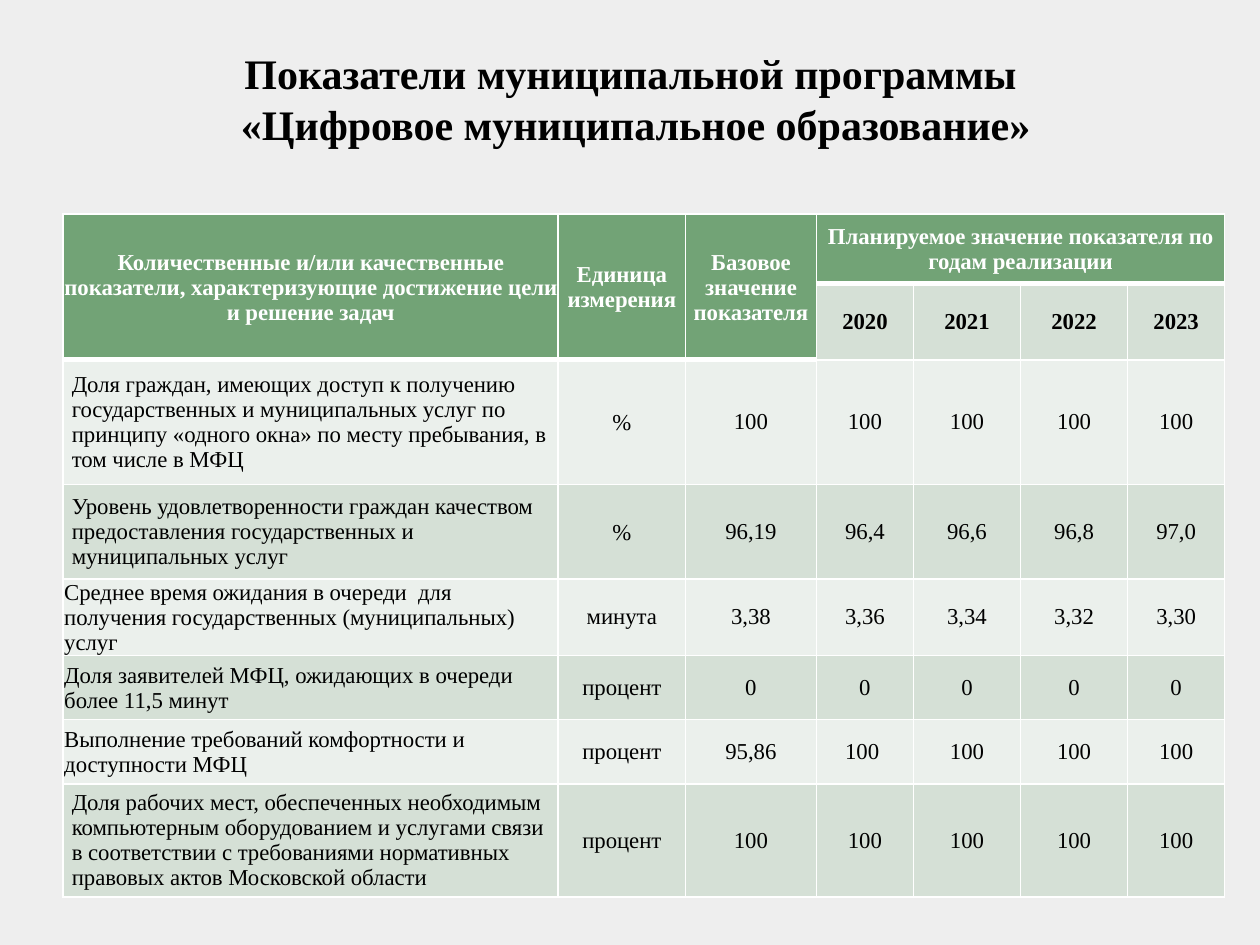
from dataclasses import dataclass

from lxml import etree
from pptx import Presentation
from pptx.dml.color import RGBColor
from pptx.enum.text import MSO_ANCHOR, PP_ALIGN
from pptx.oxml.ns import qn
from pptx.util import Inches, Pt

LEFT, CENTER = PP_ALIGN.LEFT, PP_ALIGN.CENTER
MIDDLE, BOTTOM = MSO_ANCHOR.MIDDLE, MSO_ANCHOR.BOTTOM


@dataclass(frozen=True)
class Theme:
    font: str = "Times New Roman"
    title_size: int = 24
    table_size: int = 13
    background: str = "EEEEEE"
    text: str = "000000"
    white: str = "FFFFFF"
    header: str = "72A376"
    band_dark: str = "D5E0D6"
    band_light: str = "EBF0EC"
    border: float = 1
    header_border: float = 3
    tight: tuple = (0.01, 0.01, 0.01, 0)
    wide: tuple = (0.07, 0, 0.07, 0)


class SlideBuilder:
    def __init__(self, prs, theme):
        self.theme = theme
        self.slide = prs.slides.add_slide(prs.slide_layouts[6])
        fill = self.slide.background.fill
        fill.solid()
        fill.fore_color.rgb = RGBColor.from_string(theme.background)

    def run(self, p, text, size, color, bold):
        r = p.add_run()
        r.text = text
        r.font.name = self.theme.font
        r.font.size = Pt(size)
        r.font.bold = bold
        r.font.color.rgb = RGBColor.from_string(color)

    def title(self, lines, x, y, w, h):
        sp = self.slide.shapes.add_textbox(Inches(x), Inches(y), Inches(w), Inches(h))
        tf = sp.text_frame
        tf.word_wrap = True
        tf.vertical_anchor = BOTTOM
        p = tf.paragraphs[0]
        p.alignment = CENTER
        for i, line in enumerate(lines):
            if i:
                p.add_line_break()
            self.run(p, line, self.theme.title_size, self.theme.text, True)

    def table(self, x, y, widths, heights):
        frame = self.slide.shapes.add_table(
            len(heights), len(widths), Inches(x), Inches(y),
            Inches(sum(widths)), Inches(sum(heights)))
        table = frame.table
        table.first_row = table.horz_banding = False
        for column, width in zip(table.columns, widths):
            column.width = Inches(width)
        for row, height in zip(table.rows, heights):
            row.height = Inches(height)
        return table

    def box(self, cell, fill, bottom=None):
        """Draw the borders and fill of a cell."""
        th = self.theme
        tc_pr = cell._tc.get_or_add_tcPr()
        for side in "LRTB":
            width = bottom if side == "B" and bottom else th.border
            ln = etree.SubElement(tc_pr, qn(f"a:ln{side}"), w=str(Pt(width)))
            solid = etree.SubElement(ln, qn("a:solidFill"))
            etree.SubElement(solid, qn("a:srgbClr"), val=th.white)
        cell.fill.solid()
        cell.fill.fore_color.rgb = RGBColor.from_string(fill)

    def cell_text(self, cell, text, color, insets, align=CENTER, bold=False):
        cell.vertical_anchor = MIDDLE
        (cell.margin_left, cell.margin_top,
         cell.margin_right, cell.margin_bottom) = map(Inches, insets)
        p = cell.text_frame.paragraphs[0]
        p.alignment = align
        self.run(p, text, self.theme.table_size, color, bold)


COLUMN_WIDTHS = [3.93, 1.01, 1.04, 0.77, 0.85, 0.85, 0.77]
ROW_HEIGHTS = [0.55, 0.6, 0.99, 0.75, 0.6, 0.51, 0.51, 0.9]

HEADERS = [
    "Количественные и/или качественные показатели, характеризующие достижение цели и решение задач",
    "Единица измерения",
    "Базовое значение показателя",
    "Планируемое значение показателя по годам реализации",
]
YEARS = ["2020", "2021", "2022", "2023"]
FIRST_YEAR = len(HEADERS) - 1

# Indicator, unit, base value, planned values by year
INDICATORS = [
    ("Доля граждан, имеющих доступ к получению государственных и муниципальных услуг "
     "по принципу «одного окна» по месту пребывания, в том числе в МФЦ",
     "%", "100", "100", "100", "100", "100"),
    ("Уровень удовлетворенности граждан качеством предоставления государственных и "
     "муниципальных услуг",
     "%", "96,19", "96,4", "96,6", "96,8", "97,0"),
    ("Среднее время ожидания в очереди  для получения государственных (муниципальных) услуг",
     "минута", "3,38", "3,36", "3,34", "3,32", "3,30"),
    ("Доля заявителей МФЦ, ожидающих в очереди более 11,5 минут",
     "процент", "0", "0", "0", "0", "0"),
    ("Выполнение требований комфортности и доступности МФЦ",
     "процент", "95,86", "100 ", "100", "100", "100"),
    ("Доля рабочих мест, обеспеченных необходимым компьютерным оборудованием и услугами "
     "связи в соответствии с требованиями нормативных правовых актов Московской области",
     "процент", "100", "100", "100", "100", "100"),
]
TIGHT_INDICATORS = (2, 3, 4)


def main():
    prs = Presentation()
    prs.slide_width, prs.slide_height = Inches(10), Inches(7.5)
    th = Theme()
    s = SlideBuilder(prs, th)

    # Table header: three tall cells and one wide cell above the years
    table = s.table(0.5, 1.7, COLUMN_WIDTHS, ROW_HEIGHTS)
    for col in range(len(COLUMN_WIDTHS)):
        s.box(table.cell(0, col), th.header, th.header_border)
        if col < FIRST_YEAR:
            s.box(table.cell(1, col), th.header, th.header_border)
            table.cell(0, col).merge(table.cell(1, col))
    table.cell(0, FIRST_YEAR).merge(table.cell(0, len(COLUMN_WIDTHS) - 1))
    for col, text in enumerate(HEADERS):
        s.cell_text(table.cell(0, col), text, th.white, th.tight, bold=True)
    for col, year in enumerate(YEARS, FIRST_YEAR):
        s.box(table.cell(1, col), th.band_dark)
        s.cell_text(table.cell(1, col), year, th.text, th.tight, bold=True)

    # Indicator rows in alternating bands
    for i, values in enumerate(INDICATORS):
        band = th.band_dark if i % 2 else th.band_light
        for col, value in enumerate(values):
            cell = table.cell(i + 2, col)
            is_tight = value == "%" or (col == 0 and i in TIGHT_INDICATORS)
            s.box(cell, band)
            s.cell_text(cell, value, th.text, th.tight if is_tight else th.wide,
                        CENTER if col else LEFT)

    # Title
    s.title(["Показатели муниципальной программы ",
             "«Цифровое муниципальное образование»"], 0.59, 0.29, 8.91, 0.94)

    prs.save("out.pptx")


if __name__ == "__main__":
    main()
